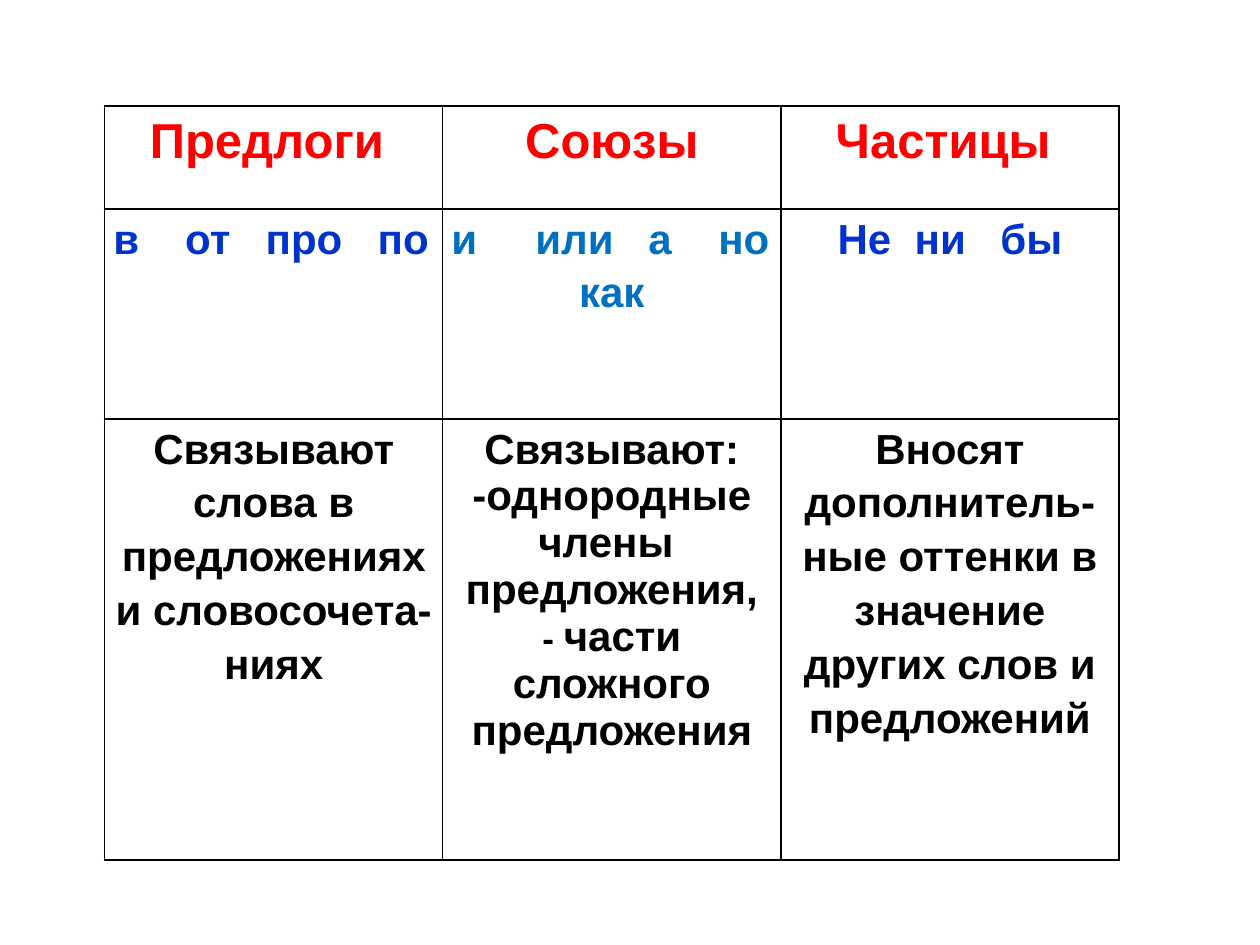
from lxml import etree
from pptx import Presentation
from pptx.dml.color import RGBColor
from pptx.enum.text import PP_ALIGN
from pptx.oxml.ns import qn
from pptx.util import Pt

CENTER, LEFT = PP_ALIGN.CENTER, PP_ALIGN.LEFT
COLORS = {"heading": "FF0000", "blue": "0033CC", "azure": "0070C0",
          "body": "000000", "border": "000000"}
FONT = "Arial"
DASH = "- "

HEADINGS = ["Предлоги ", "Союзы", "Частицы "]
EXAMPLES = [
    ("blue", ["в\tот\tпро\tпо"], [41, 87, 151]),
    ("azure", ["и\tили\tа\tно", "как"], [48, 112.5, 152.5]),
    ("blue", ["\tНе\tни\tбы"], [27.5, 71.5, 120.5]),
]
ROLES = [
    ["Связывают слова в предложениях и словосочета-", "ниях"],
    ["Связывают:", "-однородные члены ", "предложения,",
     "- части сложного предложения"],
    ["Вносят дополнитель-",
     "ные оттенки в значение других слов и предложений"],
]
TABLE_LEFT, TABLE_TOP = 59.8, 60.5
COLUMN_WIDTH = 193.2
ROW_HEIGHTS = [59, 120, 252]


def add_borders(cell):
    properties = cell._tc.get_or_add_tcPr()
    for side in ("a:lnL", "a:lnR", "a:lnT", "a:lnB"):
        line = etree.SubElement(properties, qn(side), w=str(Pt(1)))
        fill = etree.SubElement(line, qn("a:solidFill"))
        etree.SubElement(fill, qn("a:srgbClr"), val=COLORS["border"])


def add_tabs(paragraph, stops):
    tabs = etree.SubElement(paragraph._p.get_or_add_pPr(), qn("a:tabLst"))
    for stop in stops:
        etree.SubElement(tabs, qn("a:tab"), pos=str(Pt(stop)), algn="l")


def style_run(run, size, color):
    run.font.name = FONT
    run.font.size = Pt(size)
    run.font.bold = True
    run.font.color.rgb = RGBColor.from_string(COLORS[color])


def fill_cell(cell, lines, size, color, stops=()):
    add_borders(cell)
    cell.fill.background()
    cell.margin_left = cell.margin_right = Pt(5)
    cell.margin_top = cell.margin_bottom = 0
    cell.text_frame.text = "\n".join(lines)
    for index, paragraph in enumerate(cell.text_frame.paragraphs):
        tabbed = "\t" in paragraph.text
        paragraph.alignment = LEFT if tabbed else CENTER
        tight = lines[0] == "Связывают:" and index > 0
        paragraph.line_spacing = 1.0 if tight else 1.15
        if tabbed:
            add_tabs(paragraph, stops)
        if paragraph.text.startswith(DASH):
            rest = paragraph.text[len(DASH):]
            paragraph.runs[0].text = DASH
            style_run(paragraph.runs[0], 20, color)
            paragraph.add_run().text = rest
            style_run(paragraph.runs[1], size, color)
        else:
            style_run(paragraph.runs[0], size, color)


def main():
    deck = Presentation()
    deck.slide_width, deck.slide_height = Pt(720), Pt(540)
    slide = deck.slides.add_slide(deck.slide_layouts[6])
    table = slide.shapes.add_table(
        len(ROW_HEIGHTS), len(HEADINGS), Pt(TABLE_LEFT), Pt(TABLE_TOP),
        Pt(COLUMN_WIDTH * len(HEADINGS)), Pt(sum(ROW_HEIGHTS))).table
    table.first_row = table.horz_banding = False
    for row, height in zip(table.rows, ROW_HEIGHTS):
        row.height = Pt(height)
    columns = zip(HEADINGS, EXAMPLES, ROLES)
    for column, (heading, (color, words, stops), role) in enumerate(columns):
        table.columns[column].width = Pt(COLUMN_WIDTH)
        fill_cell(table.cell(0, column), [heading], 28, "heading")
        fill_cell(table.cell(1, column), words, 24, color, stops)
        fill_cell(table.cell(2, column), role, 24, "body")
    deck.save("out.pptx")


if __name__ == "__main__":
    main()
